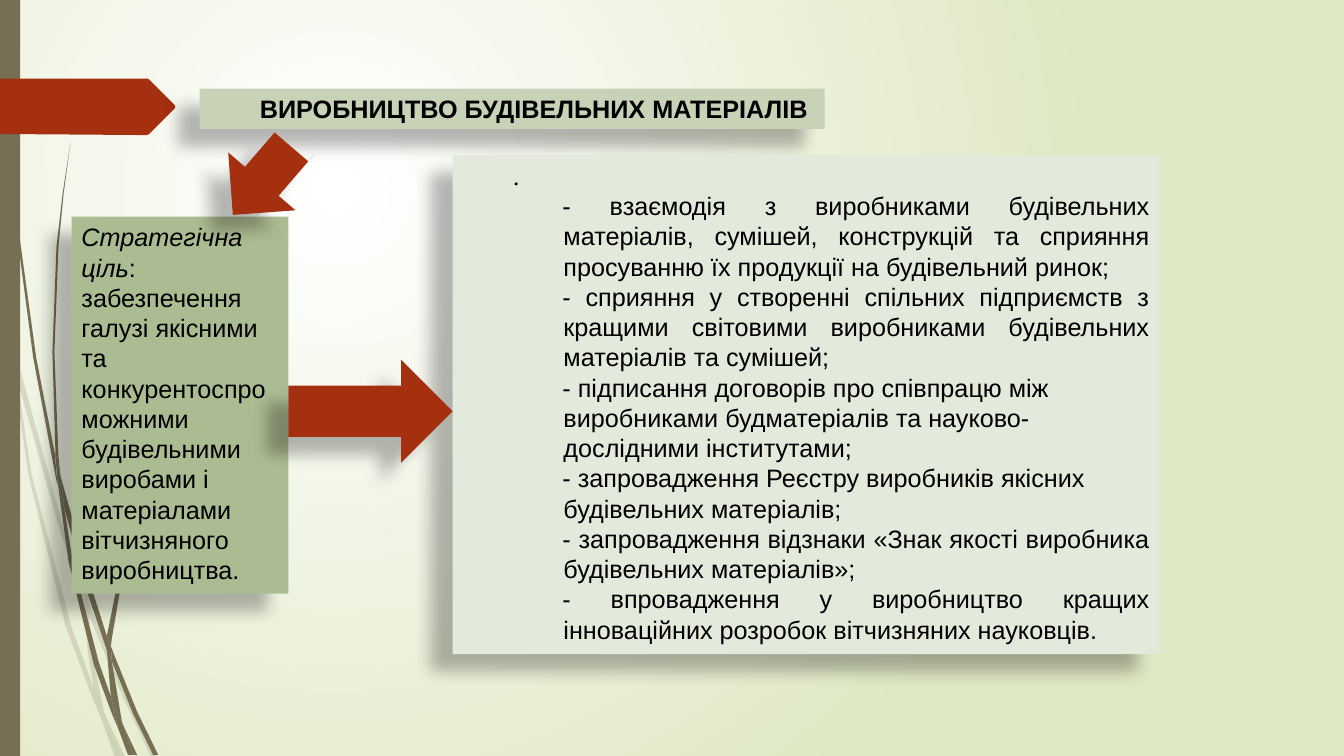
from pptx import Presentation, util as u
from pptx.dml.color import RGBColor
from pptx.enum import shapes, text
from pptx.oxml import parse_xml
from pptx.oxml.ns import qn

PX = u.Inches(1) // 100
A_NS = 'xmlns:a="http://schemas.openxmlformats.org/drawingml/2006/main"'
OLIVE, RUST, BLACK = "766F54", "A53010", "000000"

PALE_BLADES = [
    [(11, 350), (9, 322), (0, 282), (0, 299), (10, 344)],
    [(58, 522), (84, 599), (85, 586), (62, 520), (14, 345), (17, 376)],
    [(92, 607), (88, 596), (88, 610), (123, 694), (150, 751), (155, 751), (127, 692)],
    [(119, 751), (124, 751), (105, 711)],
    [(93, 683), (70, 619), (31, 469), (17, 376), (11, 350), (28, 470), (65, 621),
     (92, 693), (101, 714), (99, 707)],
    [(84, 599), (87, 646), (93, 683), (96, 692), (105, 711), (103, 706), (91, 646),
     (88, 610), (88, 608)],
    [(88, 584), (110, 462), (160, 349), (229, 245), (268, 198), (290, 175), (312, 154),
     (312, 153), (289, 175), (268, 197), (228, 244), (158, 348), (107, 461), (85, 584),
     (85, 586), (88, 596)],
    [(101, 714), (114, 751), (119, 751)],
    [(88, 608), (88, 610), (88, 596), (85, 586), (84, 599)],
    [(96, 692), (93, 683), (99, 707), (101, 714), (119, 751), (105, 711)],
]
DARK_BLADES = [
    [(7, 110), (17, 233), (33, 355), (56, 477), (57, 481), (55, 457), (55, 453),
     (36, 355), (19, 232), (8, 109), (5, 48), (4, 0), (3, 0), (4, 48)],
    [(88, 592), (106, 645), (106, 633), (106, 631), (93, 590), (60, 472), (64, 505)],
    [(113, 649), (110, 641), (111, 656), (132, 708), (152, 749), (157, 749), (136, 706)],
    [(110, 691), (98, 657), (72, 556), (64, 505), (57, 477), (68, 557), (93, 659),
     (111, 708), (117, 722), (116, 717)],
    [(60, 472), (58, 453), (54, 349), (58, 245), (63, 193), (70, 141), (62, 193),
     (56, 245), (52, 349), (55, 449)],
    [(133, 749), (136, 749), (122, 719)],
    [(57, 477), (64, 505), (60, 472), (55, 449), (55, 453)],
    [(111, 633), (125, 552), (158, 476), (205, 406), (231, 374), (245, 359), (261, 344),
     (260, 344), (245, 358), (231, 373), (204, 405), (156, 474), (122, 551), (106, 631),
     (110, 641)],
    [(117, 722), (127, 749), (131, 749)],
    [(106, 645), (110, 691), (116, 706), (122, 719), (121, 716), (111, 656), (109, 651)],
    [(106, 645), (109, 651), (111, 656), (110, 641), (106, 631), (106, 633)],
    [(116, 706), (110, 691), (116, 717), (117, 722), (130, 749), (133, 749), (122, 719)],
]
PAGE_TAG = [(173, 108), (148, 133), (146, 134), (136, 134), (0, 133), (0, 78),
            (146, 78), (148, 79), (173, 104), (174, 106)]

MEASURES = [
    ("- взаємодія з виробниками будівельних матеріалів, сумішей, конструкцій та "
     "сприяння просуванню їх продукції на будівельний ринок;", True),
    ("- сприяння у створенні спільних підприємств з кращими світовими виробниками "
     "будівельних матеріалів та сумішей;", True),
    ("- підписання договорів про співпрацю між виробниками будматеріалів та "
     "науково-дослідними інститутами;", False),
    ("- запровадження Реєстру виробників якісних будівельних матеріалів;", False),
    ("- запровадження відзнаки «Знак якості виробника будівельних матеріалів»;", True),
    ("- впровадження у виробництво кращих інноваційних розробок вітчизняних "
     "науковців.", True),
]


def color(hex_code):
    """Turn a hex string into a colour."""
    return RGBColor.from_string(hex_code)


def paint(shape, hex_code, opacity=100):
    """Give a shape a flat fill without outline or shadow."""
    shape.shadow.inherit = False
    shape.line.fill.background()
    shape.fill.solid()
    shape.fill.fore_color.rgb = color(hex_code)
    if opacity < 100:
        tint = shape.fill._xPr.find(".//" + qn("a:srgbClr"))
        tint.append(parse_xml(f'<a:alpha {A_NS} val="{opacity * 1000}"/>'))


def add_outline(slide, points, hex_code, opacity=100):
    """Draw a closed shape through the points."""
    outline = slide.shapes.build_freeform(*points[0], scale=PX)
    outline.add_line_segments(points[1:])
    paint(outline.convert_to_shape(), hex_code, opacity)


def add_block(slide, kind, box, hex_code):
    """Draw a flat preset shape in a px box."""
    block = slide.shapes.add_shape(kind, *(side * PX for side in box))
    paint(block, hex_code)
    return block


def cast_shadow(block):
    """Let a block throw a soft shadow to the lower left."""
    effects = block._element.spPr.find(qn("a:effectLst"))
    effects.append(parse_xml(
        f'<a:outerShdw {A_NS} blurRad="{u.Pt(11.8)}" dist="{u.Pt(19.7)}" '
        f'dir="{141 * 60000}" algn="ctr" rotWithShape="0">'
        f'<a:srgbClr val="{BLACK}"><a:alpha val="28000"/></a:srgbClr></a:outerShdw>'))


def add_panel(slide, box, hex_code, wrap=True):
    """Draw a shadowed text panel and return its text frame."""
    panel = add_block(slide, shapes.MSO_SHAPE.RECTANGLE, box, hex_code)
    cast_shadow(panel)
    frame = panel.text_frame
    frame.word_wrap = wrap
    frame.auto_size = text.MSO_AUTO_SIZE.SHAPE_TO_FIT_TEXT
    frame.vertical_anchor = text.MSO_ANCHOR.TOP
    return frame


def write(paragraph, words, justified=False, margin=0, indent=0, face="Arial"):
    """Fill a paragraph with black 18 pt text and return its run."""
    paragraph.alignment = text.PP_ALIGN.JUSTIFY if justified else text.PP_ALIGN.LEFT
    paragraph._p.get_or_add_pPr().set("marL", str(margin * PX))
    paragraph._p.get_or_add_pPr().set("indent", str(indent * PX))
    paragraph.font.size = u.Pt(18)
    paragraph.font.name = face
    paragraph.font.color.rgb = color(BLACK)
    run = paragraph.add_run()
    run.text = words
    return run


def add_arrow(slide, kind, box, rotation=0):
    """Draw a shadowed rust arrow."""
    arrow = add_block(slide, kind, box, RUST)
    arrow.rotation = rotation
    cast_shadow(arrow)


def set_background(slide):
    """Lay a radial glow from white to pale green."""
    glow = slide.background.fill
    glow.gradient()
    for stop, hex_code, position in zip(glow.gradient_stops, ("FFFFFF", "DFE8C4"), (0, 1)):
        stop.color.rgb = color(hex_code)
        stop.position = position
    gradient = slide._element.find(".//" + qn("a:gradFill"))
    gradient.replace(gradient.find(qn("a:lin")), parse_xml(
        f'<a:path {A_NS} path="circle">'
        '<a:fillToRect l="50000" t="50000" r="100000" b="100000"/></a:path>'))


def add_decoration(slide):
    """Draw the grass, the side band and the page tag."""
    for blades, opacity in ((PALE_BLADES, 20), (DARK_BLADES, 100)):
        for blade in blades:
            add_outline(slide, blade, OLIVE, opacity)
    add_block(slide, shapes.MSO_SHAPE.RECTANGLE, (0, 0, 20, 750), OLIVE)
    add_outline(slide, PAGE_TAG, RUST)


def main():
    """Build and save the slide."""
    deck = Presentation()
    deck.slide_width, deck.slide_height = u.Inches(13.33), u.Inches(7.5)
    slide = deck.slides.add_slide(deck.slide_layouts[6])
    set_background(slide)
    add_decoration(slide)

    heading = add_panel(slide, (198, 88, 620, 40), "C7D2B7", wrap=False).paragraphs[0]
    write(heading, "ВИРОБНИЦТВО БУДІВЕЛЬНИХ МАТЕРІАЛІВ", justified=True, indent=50)
    heading.font.bold = True

    goal = add_panel(slide, (71, 215, 215, 374), "ACBC92").paragraphs[0]
    write(goal, "Стратегічна ціль").font.italic = True
    write(goal, ": забезпечення галузі якісними та конкурентоспроможними будівельними "
                "виробами і матеріалами вітчизняного виробництва.")

    add_arrow(slide, shapes.MSO_SHAPE.DOWN_ARROW, (216, 135, 88, 89), 40.7)

    measures = add_panel(slide, (449, 154, 701, 495), "E3E9DB")
    write(measures.paragraphs[0], ".", justified=True, indent=50, face="Times New Roman")
    for words, justified in MEASURES:
        write(measures.add_paragraph(), words, justified, margin=100, indent=-1)

    add_arrow(slide, shapes.MSO_SHAPE.RIGHT_ARROW, (286, 357, 163, 102))
    deck.save("out.pptx")


if __name__ == "__main__":
    main()
